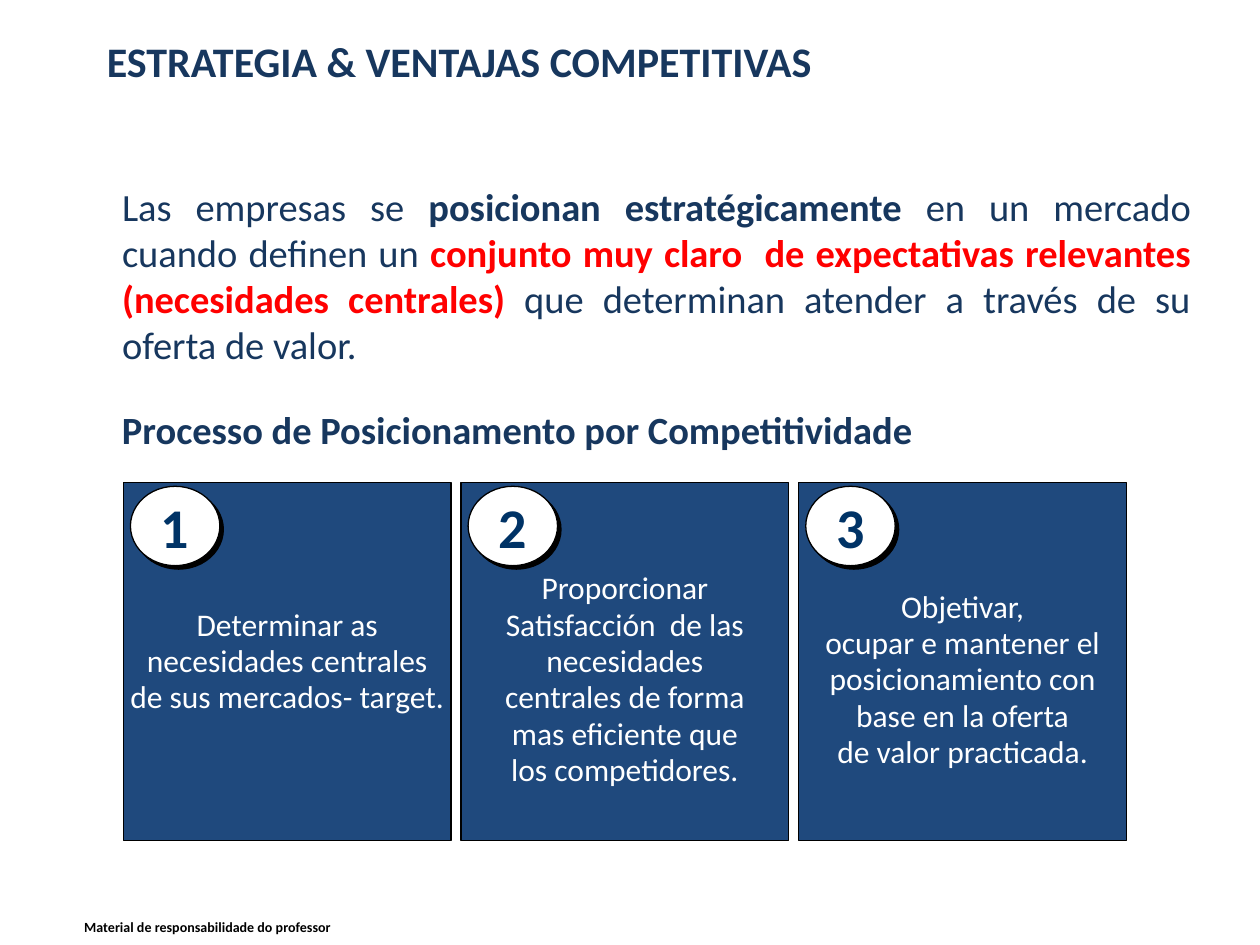
from lxml.etree import SubElement
from pptx import Presentation
from pptx.dml.color import RGBColor
from pptx.enum.shapes import MSO_SHAPE
from pptx.enum.text import MSO_ANCHOR, PP_ALIGN
from pptx.oxml.ns import qn
from pptx.util import Inches, Pt

NAVY = RGBColor(0x17, 0x37, 0x5E)
PANEL_BLUE = RGBColor(0x1F, 0x49, 0x7D)
NUMBER_BLUE = RGBColor(0x00, 0x33, 0x66)
RED = RGBColor(0xFF, 0x00, 0x00)
BLACK = RGBColor(0x00, 0x00, 0x00)
WHITE = RGBColor(0xFF, 0xFF, 0xFF)

POSITIONING = [
    ("Las empresas se ", NAVY, False),
    ("posicionan estratégicamente", NAVY, True),
    (" en un mercado cuando definen un ", NAVY, False),
    ("conjunto muy claro  de expectativas relevantes (necesidades centrales)", RED, True),
    (" que determinan atender a través de su oferta de valor.", NAVY, False),
]
STEPS = [
    (["Determinar as", "necesidades centrales", "de sus mercados- target."], 0.8),
    (["Proporcionar", "Satisfacción  de las", "necesidades", "centrales de forma",
      "mas eficiente que", "los competidores."], 3.7),
    (["Objetivar,", "ocupar e mantener el", "posicionamiento con",
      "base en la oferta", "de valor practicada."], 3.7),
]


class SlideBuilder:
    """Styles and places elements on a grid of 100 columns by 75 rows."""

    font_name = "Calibri"
    columns, rows = 100, 75

    def __init__(self, presentation):
        self.column = presentation.slide_width / self.columns
        self.row = presentation.slide_height / self.rows
        self.slide = presentation.slides.add_slide(presentation.slide_layouts[6])

    def place(self, left, top, width, height):
        return (round(left * self.column), round(top * self.row),
                round(width * self.column), round(height * self.row))

    def style(self, font, size, color, bold=False):
        font.name, font.size, font.bold = self.font_name, Pt(size), bold
        font.color.rgb = color

    def text(self, area, pieces, size, align=PP_ALIGN.LEFT, anchor=MSO_ANCHOR.TOP, spacing=1.0):
        frame = self.slide.shapes.add_textbox(*self.place(*area)).text_frame
        frame.word_wrap = True
        frame.vertical_anchor = anchor
        paragraph = frame.paragraphs[0]
        paragraph.alignment, paragraph.line_spacing = align, spacing
        for wording, color, bold in pieces:
            run = paragraph.add_run()
            run.text = wording
            self.style(run.font, size, color, bold)

    def outlined(self, kind, area, fill):
        shape = self.slide.shapes.add_shape(kind, *self.place(*area))
        shape.shadow.inherit = False
        shape.fill.solid()
        shape.fill.fore_color.rgb = fill
        shape.line.color.rgb = BLACK
        shape.line.width = Pt(0.75)
        shape.text_frame.word_wrap = False
        shape.text_frame.vertical_anchor = MSO_ANCHOR.MIDDLE
        return shape

    def panel(self, area, lines, top_inset):
        frame = self.outlined(MSO_SHAPE.RECTANGLE, area, PANEL_BLUE).text_frame
        frame.margin_top = round(top_inset * self.row)
        frame.text = "\n".join(lines)
        for position, paragraph in enumerate(frame.paragraphs):
            paragraph.alignment = PP_ALIGN.CENTER
            paragraph.line_spacing = 0.8
            paragraph.space_before = Pt(3.5 if position else 0)
            self.style(paragraph.runs[0].font, 18, WHITE)

    def badge(self, area, number):
        shape = self.outlined(MSO_SHAPE.OVAL, area, WHITE)
        effects = shape.element.spPr.find(qn("a:effectLst"))
        shadow = SubElement(effects, qn("a:outerShdw"), dist=str(Pt(2.8)), dir="2700000")
        SubElement(shadow, qn("a:srgbClr"), val=str(BLACK))
        shape.text_frame.text = str(number)
        paragraph = shape.text_frame.paragraphs[0]
        paragraph.alignment = PP_ALIGN.CENTER
        self.style(paragraph.runs[0].font, 32, NUMBER_BLUE, True)


def main():
    presentation = Presentation()
    presentation.slide_width, presentation.slide_height = Inches(10), Inches(7.5)
    builder = SlideBuilder(presentation)

    builder.text((5.7, 72.4, 56.7, 2.3),
                 [("Material de responsabilidade do professor", BLACK, True)], 8)
    builder.text((7.5, 1, 83.5, 7.6),
                 [("ESTRATEGIA & VENTAJAS COMPETITIVAS", NAVY, True)], 24,
                 anchor=MSO_ANCHOR.MIDDLE)
    builder.text((8.7, 14, 86.8, 10.9), POSITIONING, 22, align=PP_ALIGN.JUSTIFY)
    builder.text((8.7, 32.4, 84.6, 5.1),
                 [("Processo de Posicionamento por Competitividade", NAVY, True)], 22,
                 spacing=0.8)

    panel_width, gap = 26, 0.8
    for index, (lines, top_inset) in enumerate(STEPS):
        left = 9.8 + index * (panel_width + gap)
        builder.panel((left, 38.3, panel_width, 28.4), lines, top_inset)
        builder.badge((left + 0.55, 38.6, 7.1, 6.3), index + 1)

    presentation.save("out.pptx")


if __name__ == "__main__":
    main()
